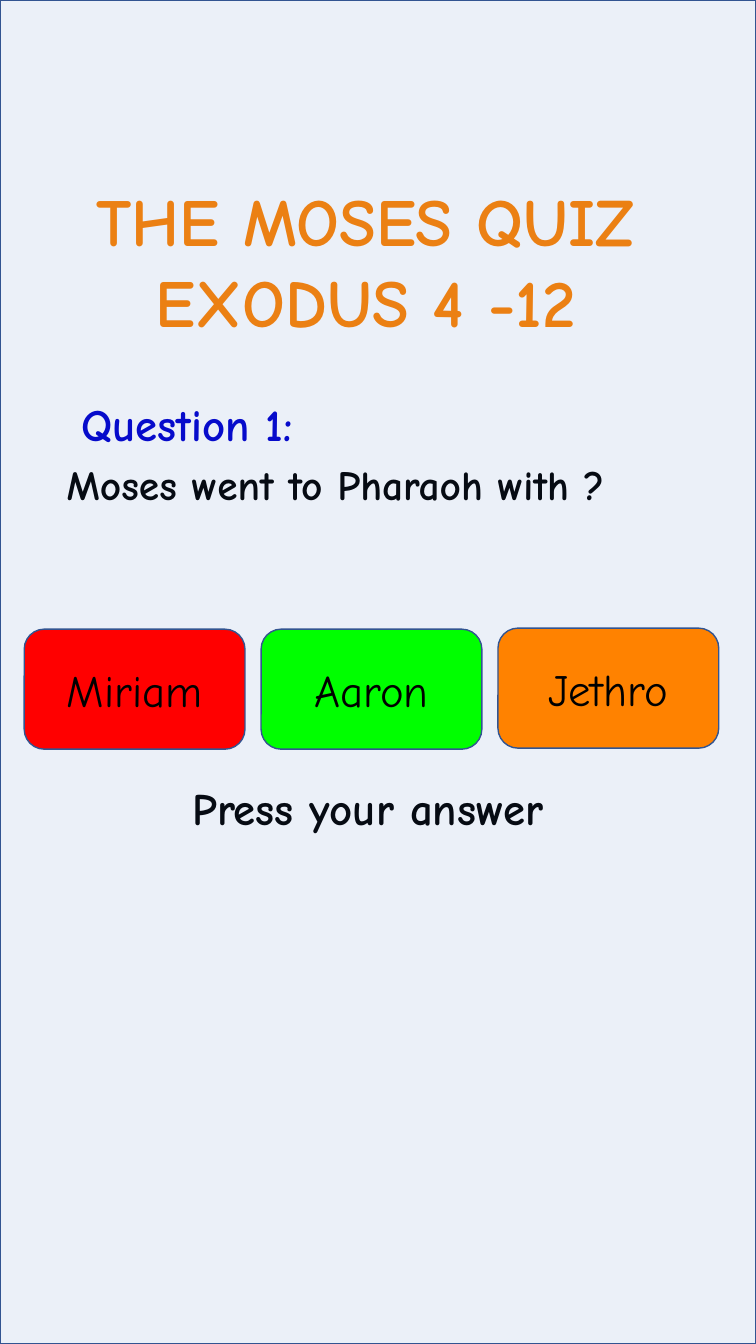
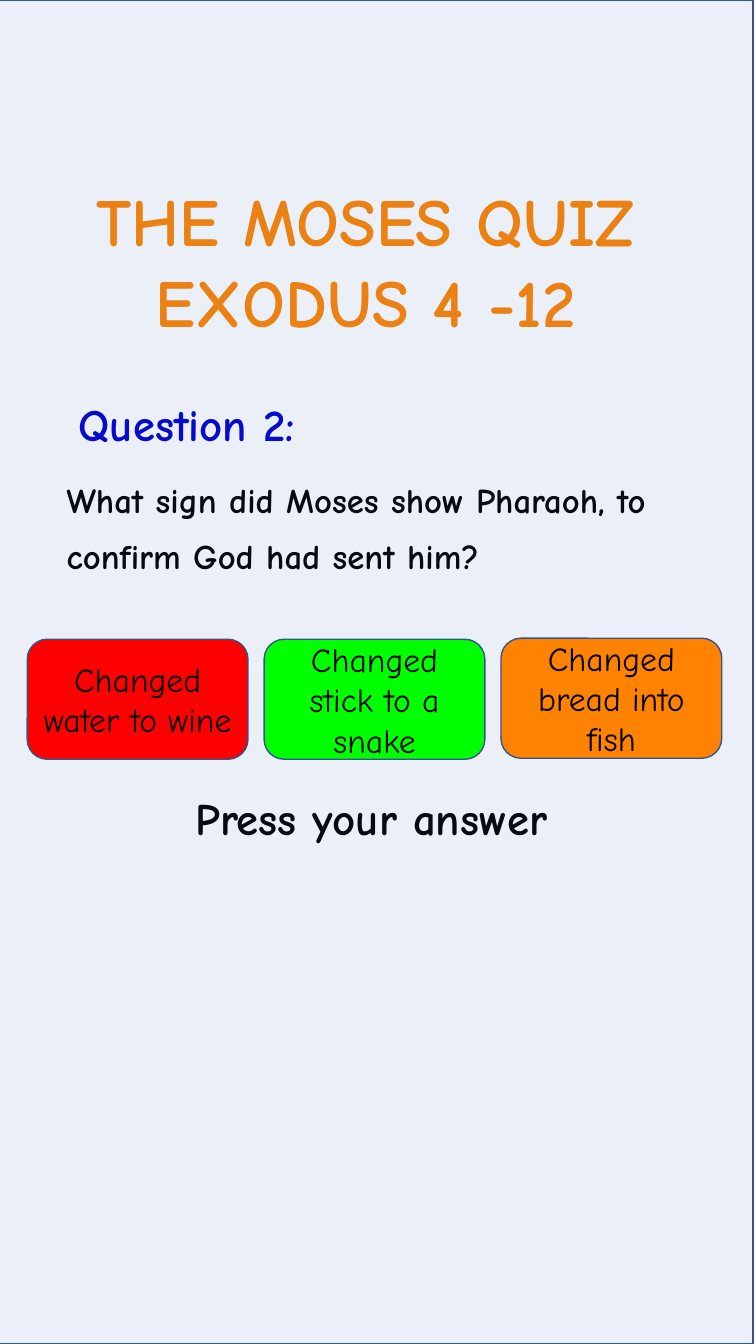
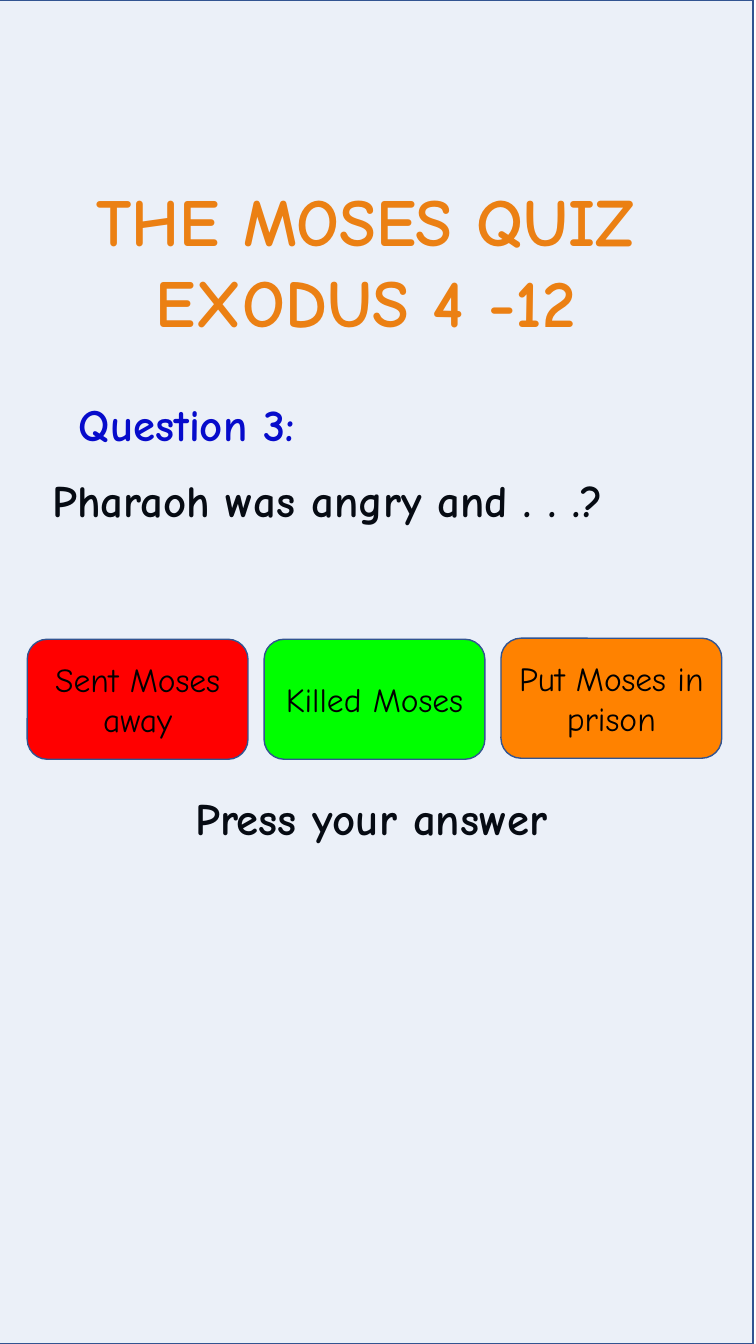
import dataclasses
import typing

import lxml.etree
import pptx
import pptx.dml.color
import pptx.enum.shapes
import pptx.enum.text
import pptx.util

Inches = pptx.util.Inches
Pt = pptx.util.Pt
Align = pptx.enum.text.PP_ALIGN
Anchor = pptx.enum.text.MSO_ANCHOR
Preset = pptx.enum.shapes.MSO_SHAPE

# Shared style
FONT = "Comic Neue"
COLORS = {
    "title": "FF8200",
    "label": "0000CC",
    "text": "000000",
    "wash": "4472C4",
    "edge": "325491",
}
ANSWER_FILLS = ("FF0000", "00FF00", "FF8200")
PAGE_WIDTH, PAGE_HEIGHT = 7.5, 13.33
ANSWER_WIDTH, ANSWER_HEIGHT, ANSWER_PITCH = 2.19, 1.19, 2.35
ANSWER_RISES = (0, 0, 0.01)
PROMPT_RIGHT, PROMPT_DOWN = 1.57, 1.51
TITLE_LINES = ("THE MOSES QUIZ", "EXODUS 4 -12")


class Area(typing.NamedTuple):
    left: float
    top: float
    width: float
    height: float


@dataclasses.dataclass(frozen=True)
class TextStyle:
    size: float
    color: str = "text"
    bold: bool = True
    align: Align = Align.LEFT
    spacing: float | pptx.util.Length = 1.0
    before: float = 0
    anchor: Anchor = Anchor.TOP
    wrap: bool = True


@dataclasses.dataclass(frozen=True)
class Question:
    label: str
    text: str
    area: Area
    style: TextStyle
    answers: tuple[str, str, str]
    answer_size: float = 24
    row_left: float = 0.27
    row_top: float = 6.34
    wash_left: float = -0.03


TITLE = TextStyle(48, "title", align=Align.CENTER, wrap=False)
LABEL = TextStyle(32, "label", align=Align.CENTER, wrap=False)
PROMPT = TextStyle(32, spacing=0.9, before=7.5)

QUESTIONS = (
    Question(
        "Question 1:", "Moses went to Pharaoh with ?",
        Area(0.56, 4.56, 6.36, 0.72),
        TextStyle(29.6, spacing=0.9, before=7.5),
        ("Miriam", "Aaron", "Jethro"),
        answer_size=32, row_left=0.24, row_top=6.24, wash_left=0,
    ),
    Question(
        "Question 2:",
        "What sign did Moses show Pharaoh, to confirm God had sent him?",
        Area(0.56, 4.56, 6.36, 1.46),
        TextStyle(24.8, spacing=Pt(40), before=7.5),
        ("Changed water to wine", "Changed stick to a snake",
         "Changed bread into fish"),
    ),
    Question(
        "Question 3:", "Pharaoh was angry and . . .?",
        Area(0.42, 4.62, 6.6, 1.46),
        TextStyle(32, spacing=Pt(40), before=7.5),
        ("Sent Moses away", "Killed Moses", "Put Moses in prison"),
    ),
)


def rgb(value: str) -> pptx.dml.color.RGBColor:
    return pptx.dml.color.RGBColor.from_string(value)


def write(box, lines: typing.Sequence[str], style: TextStyle) -> None:
    """Fill a shape with one paragraph per line."""
    frame = box.text_frame
    frame.text = "\n".join(lines)
    frame.auto_size = pptx.enum.text.MSO_AUTO_SIZE.NONE
    frame.word_wrap = style.wrap
    frame.vertical_anchor = style.anchor
    for para in frame.paragraphs:
        para.alignment = style.align
        para.line_spacing = style.spacing
        para.space_before = Pt(style.before)
        para.font.name = FONT
        para.font.size = Pt(style.size)
        para.font.bold = style.bold
        para.font.color.rgb = rgb(COLORS[style.color])


def place(box, area: Area) -> None:
    box.left, box.top, box.width, box.height = map(Inches, area)


def add_text(page, area: Area, text: str, style: TextStyle) -> None:
    write(page.shapes.add_textbox(*map(Inches, area)), [text], style)


def add_panel(page, preset: Preset, area: Area, fill: str):
    box = page.shapes.add_shape(preset, *map(Inches, area))
    box.shadow.inherit = False
    box.fill.solid()
    box.fill.fore_color.rgb = rgb(fill)
    box.line.color.rgb = rgb(COLORS["edge"])
    box.line.width = Pt(1)
    return box


def add_wash(page, left: float) -> None:
    """Lay a sheer tint over the whole page."""
    area = Area(left, 0, PAGE_WIDTH, PAGE_HEIGHT)
    wash = add_panel(page, Preset.RECTANGLE, area, COLORS["wash"])
    namespace = pptx.oxml.ns.qn
    color = wash.element.spPr.find(namespace("a:solidFill"))[0]
    lxml.etree.SubElement(color, namespace("a:alpha"), val="10000")


def add_answers(page, question: Question) -> None:
    style = TextStyle(question.answer_size, bold=False, align=Align.CENTER,
                      anchor=Anchor.MIDDLE)
    buttons = zip(question.answers, ANSWER_FILLS, ANSWER_RISES)
    for column, (answer, fill, rise) in enumerate(buttons):
        area = Area(question.row_left + column * ANSWER_PITCH,
                    question.row_top - rise, ANSWER_WIDTH, ANSWER_HEIGHT)
        button = add_panel(page, Preset.ROUNDED_RECTANGLE, area, fill)
        write(button, [answer], style)


def add_question(deck, question: Question) -> None:
    page = deck.slides.add_slide(deck.slide_layouts[0])

    # Title and question
    title, body = page.shapes.title, page.placeholders[1]
    place(title, Area(0.18, 1.73, 6.89, 1.72))
    write(title, TITLE_LINES, TITLE)
    place(body, question.area)
    write(body, [question.text], question.style)

    # Label and prompt
    add_text(page, Area(0.47, 3.89, 2.77, 0.64), question.label, LABEL)
    prompt_area = Area(question.row_left + PROMPT_RIGHT,
                       question.row_top + PROMPT_DOWN, 4.22, 0.72)
    add_text(page, prompt_area, "Press your answer", PROMPT)

    # Tint and answer buttons
    add_wash(page, question.wash_left)
    add_answers(page, question)


def main() -> None:
    deck = pptx.Presentation()
    deck.slide_width = Inches(PAGE_WIDTH)
    deck.slide_height = Inches(PAGE_HEIGHT)
    for question in QUESTIONS:
        add_question(deck, question)
    deck.save("out.pptx")


if __name__ == "__main__":
    main()
